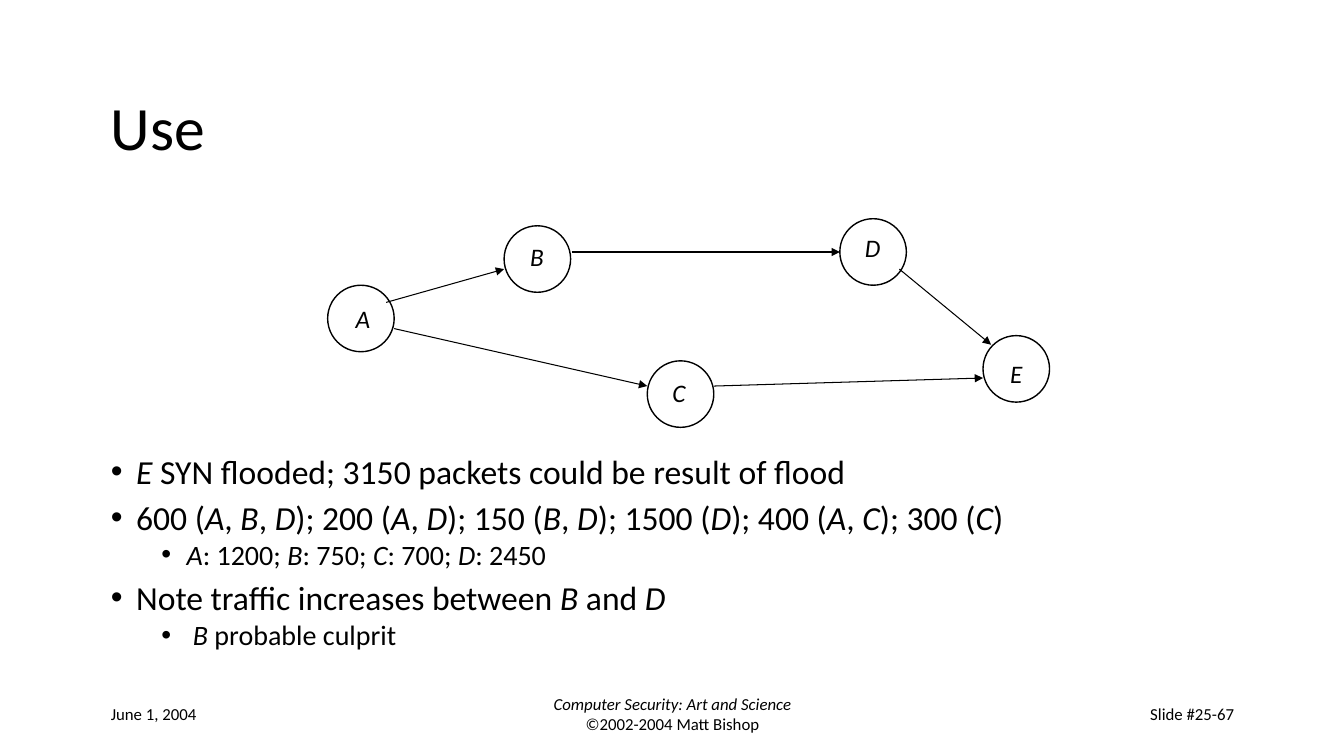
from lxml import etree
from pptx import Presentation
from pptx.dml.color import RGBColor
from pptx.enum.shapes import MSO_CONNECTOR, MSO_SHAPE
from pptx.enum.text import MSO_ANCHOR, MSO_AUTO_SIZE, PP_ALIGN
from pptx.oxml.ns import qn
from pptx.util import Inches, Pt

BLACK = RGBColor(0, 0, 0)
FONT = "Calibri"
LEFT, CENTER, RIGHT = PP_ALIGN.LEFT, PP_ALIGN.CENTER, PP_ALIGN.RIGHT
TOP, MIDDLE = MSO_ANCHOR.TOP, MSO_ANCHOR.MIDDLE
NO_FIT = MSO_AUTO_SIZE.NONE
OVAL = MSO_SHAPE.OVAL
STRAIGHT = MSO_CONNECTOR.STRAIGHT

NODE_SIZE = 0.66
NODES = [
    ("A", (3.25, 2.83), (3.43, 2.96)),
    ("B", (5, 2.24), (5.16, 2.34)),
    ("C", (6.42, 3.58), (6.57, 3.69)),
    ("D", (8.33, 2.17), (8.48, 2.26)),
    ("E", (9.75, 3.33), (9.92, 3.51)),
]
ARROWS = [
    ((3.83, 3), (5, 2.67)),
    ((5.67, 2.5), (8.33, 2.5)),
    ((3.91, 3.26), (6.42, 3.83)),
    ((7.08, 3.83), (9.75, 3.75)),
    ((8.92, 2.67), (9.83, 3.42)),
]
BULLETS = [
    (0, "*E* SYN flooded; 3150 packets could be result of flood"),
    (0, "600 (*A*, *B*, *D*); 200 (*A*, *D*); 150 (*B*, *D*); "
        "1500 (*D*); 400 (*A*, *C*); 300 (*C*)"),
    (1, "*A*: 1200; *B*: 750; *C*: 700; *D*: 2450"),
    (0, "Note traffic increases between *B* and *D*"),
    (1, " *B* probable culprit"),
]
LEVEL_SIZE = [24, 20]
LEVEL_SPACE = [10, 5]
LEVEL_INDENT = [0.25, 0.75]
FOOTERS = [
    (1, 2.78, LEFT, ["June 1, 2004"]),
    (4.56, 4.22, CENTER, ["*Computer Security: Art and Science*", "©2002-2004 Matt Bishop"]),
    (9.56, 2.78, RIGHT, ["Slide #25-67"]),
]


class SlideBuilder:
    def __init__(self, slide):
        self.slide = slide

    def place(self, shape, left, top, width, height):
        shape.left, shape.top = Inches(left), Inches(top)
        shape.width, shape.height = Inches(width), Inches(height)

    def frame(self, shape, anchor, wrap=True):
        text_frame = shape.text_frame
        text_frame.word_wrap = wrap
        text_frame.auto_size = NO_FIT
        text_frame.vertical_anchor = anchor
        return text_frame

    def paragraphs(self, text_frame, count):
        for _ in range(count - 1):
            text_frame.add_paragraph()
        return text_frame.paragraphs

    def add_runs(self, paragraph, marked_text, size, alignment=LEFT):
        paragraph.alignment = alignment
        for index, part in enumerate(marked_text.split("*")):
            if part:
                run = paragraph.add_run()
                run.text = part
                run.font.name = FONT
                run.font.size = Pt(size)
                run.font.color.rgb = BLACK
                run.font.italic = index % 2 == 1

    def title(self, text):
        shape = self.slide.shapes.title
        self.place(shape, 1, 0.67, 11.33, 1.25)
        paragraph = self.frame(shape, MIDDLE).paragraphs[0]
        paragraph.line_spacing = 0.9
        self.add_runs(paragraph, text, 44)

    def bullets(self, items):
        shape = self.slide.placeholders[1]
        self.place(shape, 1, 4.5, 11.33, 2.17)
        paragraphs = self.paragraphs(self.frame(shape, TOP), len(items))
        for index, (paragraph, (level, text)) in enumerate(zip(paragraphs, items)):
            paragraph.level = level
            paragraph.line_spacing = 0.8
            paragraph.space_before = Pt(LEVEL_SPACE[level] if index else 0)
            paragraph.space_after = Pt(0)
            properties = paragraph._p.get_or_add_pPr()
            properties.set("marL", str(Inches(LEVEL_INDENT[level])))
            properties.set("indent", str(Inches(-0.25)))
            etree.SubElement(properties, qn("a:buFont")).set("typeface", "Arial")
            etree.SubElement(properties, qn("a:buChar")).set("char", "•")
            self.add_runs(paragraph, text, LEVEL_SIZE[level])

    def text(self, left, top, width, height, lines, size, alignment=LEFT, anchor=TOP, wrap=True):
        shape = self.slide.shapes.add_textbox(
            Inches(left), Inches(top), Inches(width), Inches(height))
        text_frame = self.frame(shape, anchor, wrap)
        for paragraph, line in zip(self.paragraphs(text_frame, len(lines)), lines):
            self.add_runs(paragraph, line, size, alignment)

    def node(self, left, top):
        shape = self.slide.shapes.add_shape(
            OVAL, Inches(left), Inches(top), Inches(NODE_SIZE), Inches(NODE_SIZE))
        shape.shadow.inherit = False
        shape.fill.background()
        shape.line.color.rgb = BLACK
        shape.line.width = Pt(1)

    def arrow(self, start, end):
        connector = self.slide.shapes.add_connector(
            STRAIGHT, *(Inches(value) for value in start + end))
        connector.line.color.rgb = BLACK
        connector.line.width = Pt(0.75)
        properties = connector._element.spPr
        line = properties.find(qn("a:ln"))
        etree.SubElement(line, qn("a:tailEnd")).set("type", "triangle")
        etree.SubElement(properties, qn("a:effectLst"))


def main():
    presentation = Presentation()
    presentation.slide_width = Inches(13.33)
    presentation.slide_height = Inches(7.5)
    slide = presentation.slides.add_slide(presentation.slide_layouts[1])
    builder = SlideBuilder(slide)

    for left, width, alignment, lines in FOOTERS:
        builder.text(left, 6.83, width, 0.5, lines, 12, alignment, MIDDLE)
    builder.title("Use")
    builder.bullets(BULLETS)
    for _, position, _ in NODES:
        builder.node(*position)
    for name, _, position in NODES:
        builder.text(*position, 0.35, 0.4, [f"*{name}*"], 18, wrap=False)
    for start, end in ARROWS:
        builder.arrow(start, end)

    presentation.save("out.pptx")


if __name__ == "__main__":
    main()
